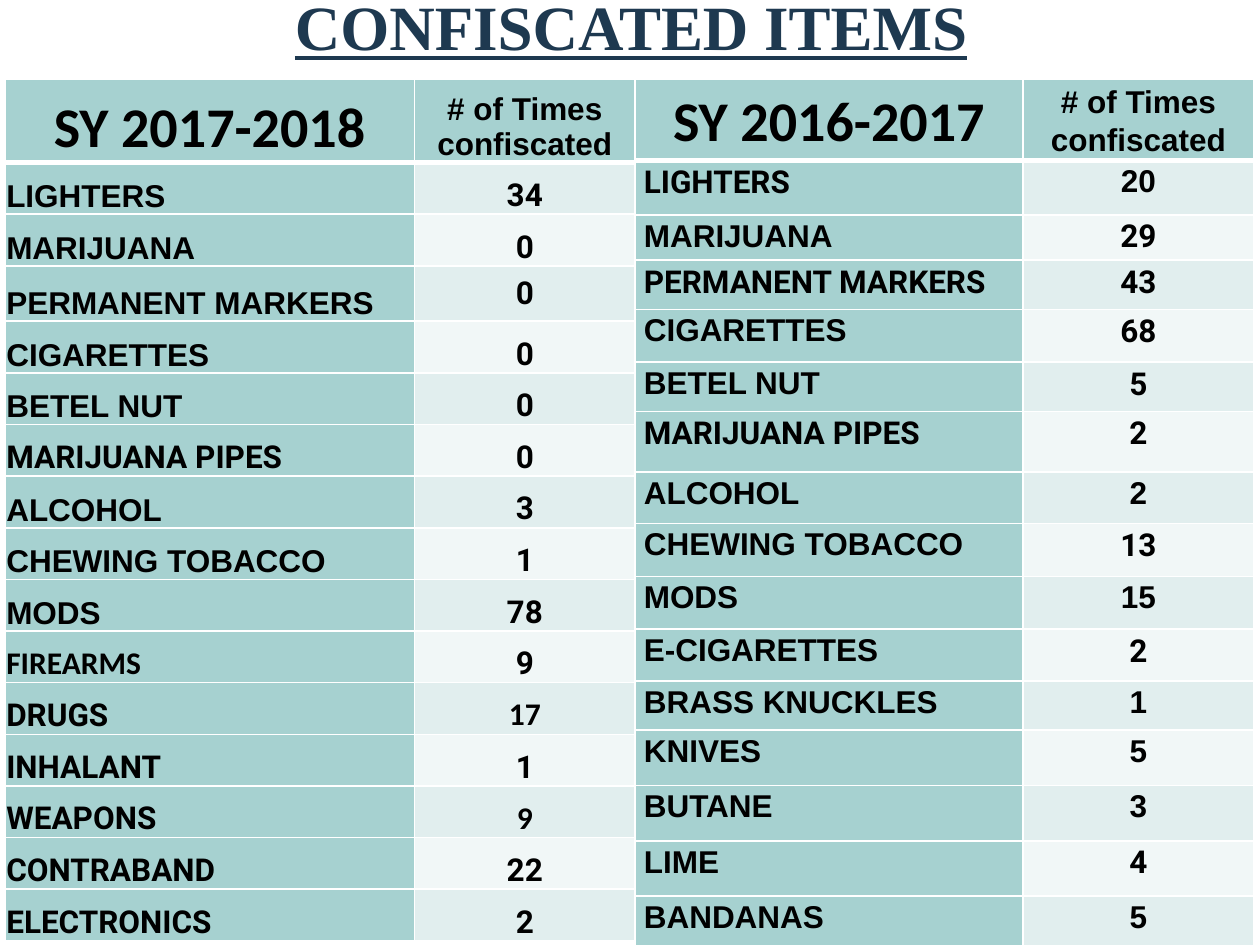
from lxml import etree
from pptx import Presentation
from pptx.dml.color import RGBColor
from pptx.enum import text
from pptx.oxml.ns import qn
from pptx.util import Inches, Pt

NAVY = RGBColor(0x1E, 0x39, 0x50)
BLACK = RGBColor(0, 0, 0)
WHITE = RGBColor(255, 255, 255)
TEAL = RGBColor(0xA6, 0xD1, 0xD0)
BANDS = RGBColor(0xE1, 0xEE, 0xEE), RGBColor(0xF1, 0xF7, 0xF7)
FONTS = {"A": "Arial", "C": "Calibri", "R": "Roboto"}
MID, LOW, TOP = (text.MSO_ANCHOR.MIDDLE, text.MSO_ANCHOR.BOTTOM,
                 text.MSO_ANCHOR.TOP)
LEFT, MIDDLE = text.PP_ALIGN.LEFT, text.PP_ALIGN.CENTER

# Item, count, fonts of the two cells
NEW = [
    ("LIGHTERS", "34", "AR"), ("MARIJUANA", "0", "AR"),
    ("PERMANENT MARKERS", "0", "AR"), ("CIGARETTES", "0", "AR"),
    ("BETEL NUT", "0", "AR"), ("MARIJUANA PIPES", "0", "RR"),
    ("ALCOHOL", "3", "AR"), ("CHEWING TOBACCO", "1", "AR"),
    ("MODS", "78", "AR"), ("FIREARMS", "9", "CR"),
    ("DRUGS", "17", "RC"), ("INHALANT", "1", "RR"),
    ("WEAPONS", "9", "RC"), ("CONTRABAND", "22", "RR"),
    ("ELECTRONICS", "2", "RR"),
]
OLD = [
    ("LIGHTERS", "20", "RA"), ("MARIJUANA", "29", "AR"),
    ("PERMANENT MARKERS", "43", "RR"), ("CIGARETTES", "68", "AR"),
    ("BETEL NUT", "5", "AR"), ("MARIJUANA PIPES", "2", "RR"),
    ("ALCOHOL", "2", "AA"), ("CHEWING TOBACCO", "13", "AR"),
    ("MODS", "15", "AA"), ("E-CIGARETTES", "2", "AR"),
    ("BRASS KNUCKLES", "1", "AA"), ("KNIVES", "5", "AA"),
    ("BUTANE", "3", "AA"), ("LIME", "4", "AR"), ("BANDANAS", "5", "AA"),
]
NEW_ROWS = [0.66, 0.41, 0.41, 0.44] + [0.41] * 12
OLD_ROWS = [0.63, 0.43, 0.36, 0.39, 0.42, 0.39, 0.48, 0.41,
            0.42, 0.42, 0.41, 0.39] + [0.44] * 4


def add_run(para, words, font, size, color):
    run = para.add_run()
    run.text = words
    run.font.name = font
    run.font.size = Pt(size)
    run.font.bold = True
    run.font.color.rgb = color
    return run


def add_title(slide, left, top, width, height):
    box = slide.shapes.add_textbox(*map(Inches, (left, top, width, height)))
    frame = box.text_frame
    frame.word_wrap = True
    frame.vertical_anchor = MID
    para = frame.paragraphs[0]
    para.alignment = MIDDLE
    run = add_run(para, "CONFISCATED ITEMS", "Times New Roman", 36, NAVY)
    run.font.underline = True


def set_edges(cell, row):
    # The rule under the header is thicker than the others
    thick = {"L": 1, "R": 1, "T": 3 if row == 1 else 1,
             "B": 3 if row == 0 else 1}
    props = cell._tc.get_or_add_tcPr()
    for side, width in thick.items():
        line = etree.SubElement(props, qn("a:ln" + side), w=str(Pt(width)))
        fill = etree.SubElement(line, qn("a:solidFill"))
        etree.SubElement(fill, qn("a:srgbClr"), val=str(WHITE))


def add_year(slide, left, top, cols, rows, year, items, inset, anchors,
             spacing=(None, None), after=None):
    """Anchors and spacing are pairs: header row, item rows."""
    frame = slide.shapes.add_table(
        len(rows), len(cols), Inches(left), Inches(top),
        Inches(sum(cols)), Inches(sum(rows)))
    table = frame.table
    for col, width in zip(table.columns, cols):
        col.width = Inches(width)
    for row, height in zip(table.rows, rows):
        row.height = Inches(height)

    lines = [(year, "# of Times confiscated", "CA")] + items
    for r, (*words, fonts) in enumerate(lines):
        body = int(r > 0)
        for c, (word, font) in enumerate(zip(words, fonts)):
            cell = table.cell(r, c)
            set_edges(cell, r)
            cell.fill.solid()
            cell.fill.fore_color.rgb = BANDS[(r - 1) % 2] if body and c else TEAL
            cell.margin_left = cell.margin_right = Inches(inset)
            cell.margin_top, cell.margin_bottom = Inches(0.01), 0
            cell.vertical_anchor = anchors[body]
            para = cell.text_frame.paragraphs[0]
            para.alignment = LEFT if body and not c else MIDDLE
            para.line_spacing = spacing[body]
            if body and after:
                para.space_after = Pt(after)
            add_run(para, word, FONTS[font], 18 if body or c else 32, BLACK)
    return table


def main():
    prs = Presentation()
    prs.slide_width, prs.slide_height = Inches(10), Inches(7.5)
    slide = prs.slides.add_slide(prs.slide_layouts[6])
    add_title(slide, 0.01, -0.21, 10, 0.83)
    # Earlier year on the right
    add_year(slide, 5.04, 0.63, (3.08, 1.83), OLD_ROWS, "SY 2016-2017", OLD,
             0.07, (MID, TOP), (1.06, 1.07), 8)
    # Later year on the left
    table = add_year(slide, 0.04, 0.63, (3.25, 1.75), NEW_ROWS,
                     "SY 2017-2018", NEW, 0.01, (LOW, LOW))
    table.cell(3, 1).vertical_anchor = MID
    prs.save("out.pptx")


if __name__ == "__main__":
    main()
